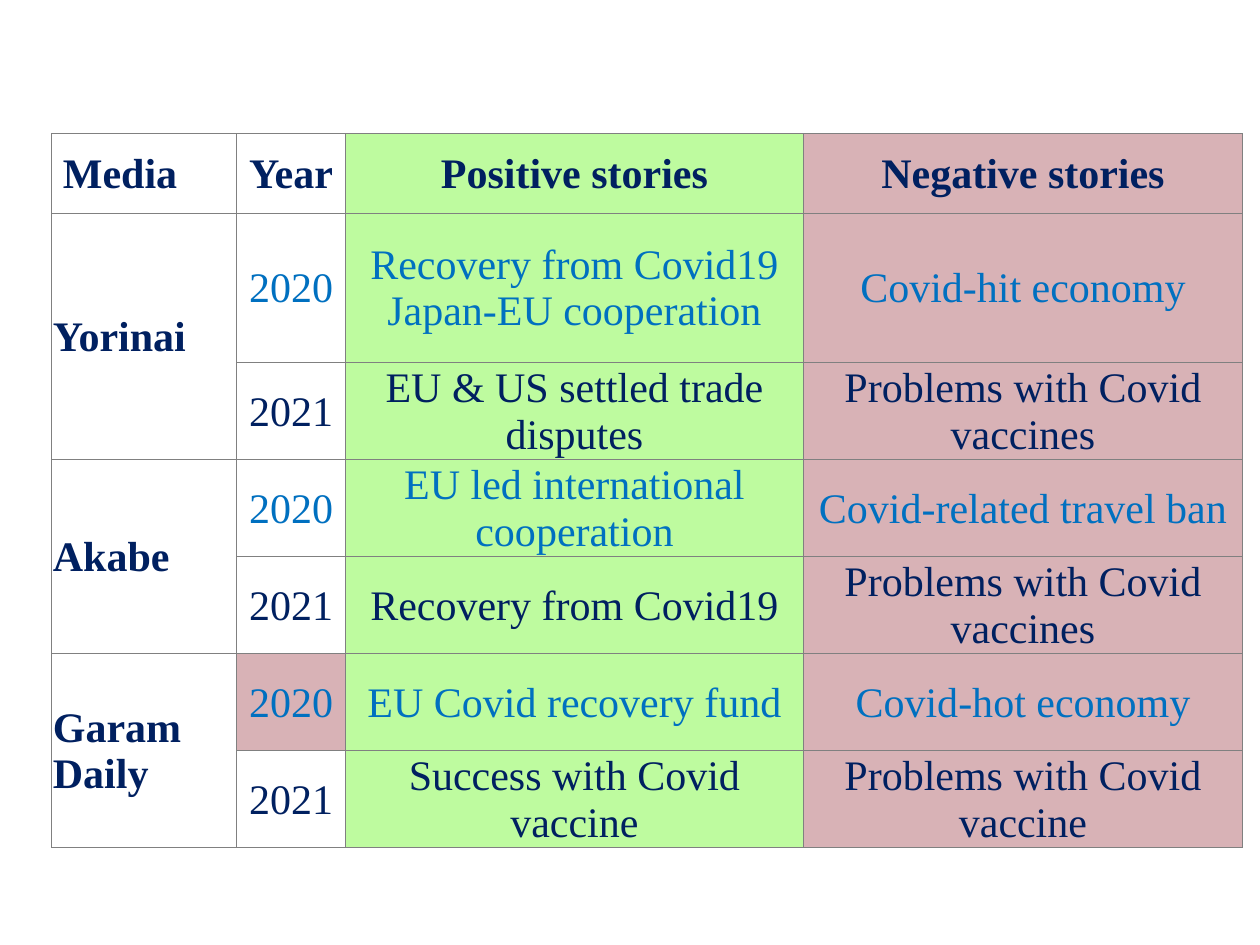
from typing import NamedTuple

from lxml import etree
from pptx import Presentation
from pptx import util as u
from pptx.dml.color import RGBColor
from pptx.enum import text
from pptx.oxml import ns

HUES = {
    "white": "FFFFFF", "good": "BEFB9F", "bad": "D8B2B6",
    "navy": "002060", "blue": "0070C0", "rule": "808080",
}
FILLS = ["white", "white", "good", "bad"]
COLS = [1.47, 0.86, 3.64, 3.48]
ROWS = [0.63, 1.19] + [0.77] * 5
HEADS = ["Media", "Year", "Positive stories", "Negative stories"]


class Year(NamedTuple):
    name: str
    good: str
    bad: str
    fill: str = "white"


class Paper(NamedTuple):
    name: str
    years: list[Year]


# Newspapers and their stories in each year
PAPERS = [
    Paper("Yorinai", [
        Year("2020", "Recovery from Covid19\nJapan-EU cooperation", "Covid-hit economy"),
        Year("2021", "EU & US settled trade disputes", "Problems with Covid vaccines"),
    ]),
    Paper("Akabe", [
        Year("2020", "EU led international cooperation", "Covid-related travel ban"),
        Year("2021", "Recovery from Covid19", "Problems with Covid vaccines"),
    ]),
    Paper("Garam Daily", [
        Year("2020", "EU Covid recovery fund", "Covid-hot economy", "bad"),
        Year("2021", "Success with Covid vaccine", "Problems with Covid vaccine"),
    ]),
]


def edge(cell) -> None:
    """Rule all four sides of a cell."""
    props = cell._tc.get_or_add_tcPr()
    for side in ("lnL", "lnR", "lnT", "lnB"):
        line = etree.SubElement(props, ns.qn(f"a:{side}"), w=str(u.Pt(0.5)))
        fill = etree.SubElement(line, ns.qn("a:solidFill"))
        etree.SubElement(fill, ns.qn("a:srgbClr"), val=HUES["rule"])


def paint(cell, fill: str) -> None:
    cell.fill.solid()
    cell.fill.fore_color.rgb = RGBColor.from_string(HUES[fill])


def write(cell, words: str, *, hue: str = "navy", bold: bool = False,
          mid: bool = True, left: float = 0.01) -> None:
    cell.vertical_anchor = text.MSO_ANCHOR.MIDDLE
    cell.margin_left = u.Inches(left)
    cell.margin_right = cell.margin_top = u.Inches(0.01)
    cell.margin_bottom = 0
    cell.text = words
    for para in cell.text_frame.paragraphs:
        para.alignment = text.PP_ALIGN.CENTER if mid else text.PP_ALIGN.LEFT
        for run in para.runs:
            run.font.name = "Times New Roman"
            run.font.size = u.Pt(24)
            run.font.bold = bold
            run.font.color.rgb = RGBColor.from_string(HUES[hue])


def build() -> None:
    deck = Presentation()
    deck.slide_width, deck.slide_height = u.Inches(10), u.Inches(7.5)
    slide = deck.slides.add_slide(deck.slide_layouts[6])

    # Grid
    table = slide.shapes.add_table(
        len(ROWS), len(COLS), u.Inches(0.41), u.Inches(1.06),
        u.Inches(sum(COLS)), u.Inches(sum(ROWS))).table
    table.first_row = table.horz_banding = False
    for col, width in zip(table.columns, COLS):
        col.width = u.Inches(width)
    for row, height in zip(table.rows, ROWS):
        row.height = u.Inches(height)
        for cell, fill in zip(row.cells, FILLS):
            edge(cell)
            paint(cell, fill)

    # Header row
    for col, head in enumerate(HEADS):
        write(table.cell(0, col), head, bold=True, mid=col > 0,
              left=0.01 if col else 0.09)

    # Two rows for each newspaper
    for num, paper in enumerate(PAPERS):
        top = 1 + 2 * num
        name = table.cell(top, 0)
        name.merge(table.cell(top + 1, 0))
        write(name, paper.name, bold=True, mid=False)
        for row, (year, hue) in enumerate(zip(paper.years, ("blue", "navy")), top):
            for col, words in enumerate((year.name, year.good, year.bad), 1):
                write(table.cell(row, col), words, hue=hue)
            paint(table.cell(row, 1), year.fill)

    deck.save("out.pptx")


if __name__ == "__main__":
    build()
